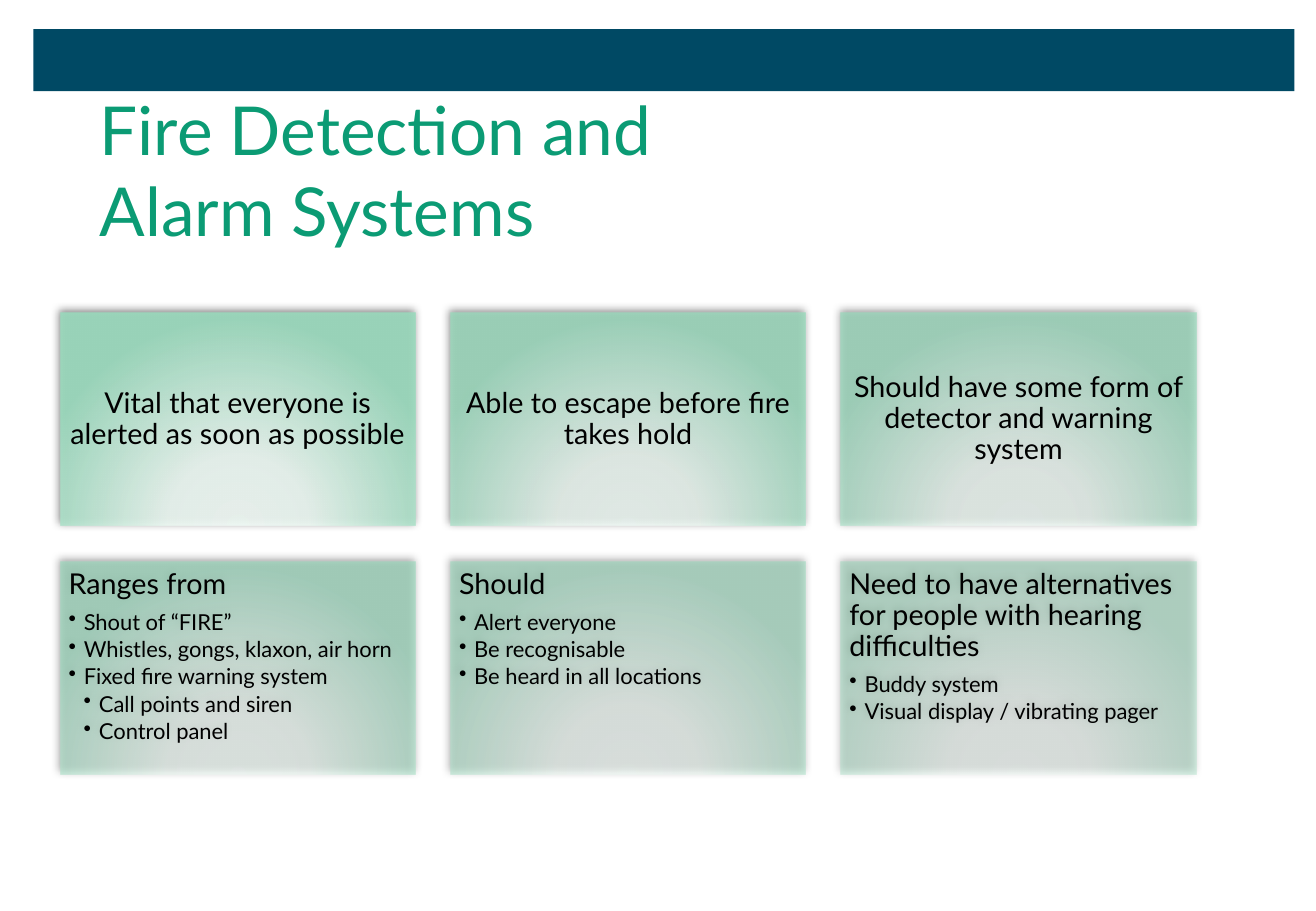
from pptx import Presentation
from pptx.dml.color import RGBColor
from pptx.enum.shapes import MSO_SHAPE
from pptx.enum.text import MSO_ANCHOR, PP_ALIGN
from pptx.oxml import parse_xml
from pptx.oxml.ns import nsdecls, qn
from pptx.util import Pt

RECT = MSO_SHAPE.RECTANGLE
TOP, MIDDLE = MSO_ANCHOR.TOP, MSO_ANCHOR.MIDDLE
LEFT, CENTER = PP_ALIGN.LEFT, PP_ALIGN.CENTER

THEME = {
    "font": "Lato",
    "bar": RGBColor.from_string("004964"),
    "title": RGBColor.from_string("0B9B74"),
    "text": RGBColor.from_string("000000"),
    "stops": [(0, "F0FBF6"), (34, "ECF8F2"), (100, "9BDBBE")],
    "shade": "000000",
    "sizes": {"title": 40, "head": 17, "item": 13},
}

FORMATS = [
    {"size": "head", "space_after": Pt(6), "indent": 0},
    {"size": "item", "space_after": Pt(2.1), "indent": 9},
    {"size": "item", "space_after": Pt(2.1), "indent": 18},
]

CARDS = [
    [(0, "Vital that everyone is alerted as soon as possible")],
    [(0, "Able to escape before fire takes hold")],
    [(0, "Should have some form of detector and warning system")],
    [
        (0, "Ranges from"),
        (1, "Shout of “FIRE”"),
        (1, "Whistles, gongs, klaxon, air horn"),
        (1, "Fixed fire warning system"),
        (2, "Call points and siren"),
        (2, "Control panel"),
    ],
    [
        (0, "Should"),
        (1, "Alert everyone"),
        (1, "Be recognisable"),
        (1, "Be heard in all locations"),
    ],
    [
        (0, "Need to have alternatives for people with hearing difficulties"),
        (1, "Buddy system"),
        (1, "Visual display / vibrating pager"),
    ],
]


def write(para, text, size, color):
    look = {"name": THEME["font"], "size": Pt(THEME["sizes"][size])}
    para.text = text
    for run in para.runs:
        for key, value in look.items():
            setattr(run.font, key, value)
        run.font.color.rgb = color


def glaze(shape, alpha):
    stops = "".join(
        f'<a:gs pos="{pos * 1000}"><a:srgbClr val="{color}">'
        f'<a:alpha val="{alpha * 1000}"/></a:srgbClr></a:gs>'
        for pos, color in THEME["stops"]
    )
    grad = parse_xml(
        f'<a:gradFill {nsdecls("a")} rotWithShape="1"><a:gsLst>{stops}</a:gsLst>'
        '<a:path path="circle"><a:fillToRect l="50000" t="155000" '
        'r="50000" b="-55000"/></a:path></a:gradFill>'
    )
    shadow = parse_xml(
        f'<a:outerShdw {nsdecls("a")} blurRad="{Pt(5)}" dist="{Pt(2)}" '
        f'dir="{245 * 60000}" rotWithShape="0"><a:srgbClr val="{THEME["shade"]}">'
        '<a:alpha val="50000"/></a:srgbClr></a:outerShdw>'
    )
    shape.fill.background()
    shape.line.fill.background()
    shape.shadow.inherit = False
    props = shape.element.spPr
    props.replace(props.find(qn("a:noFill")), grad)
    props.find(qn("a:effectLst")).append(shadow)


deck = Presentation()
deck.slide_width, deck.slide_height = Pt(780), Pt(540)
slide = deck.slides.add_slide(deck.slide_layouts[6])
shapes = slide.shapes

bar = shapes.add_shape(RECT, Pt(19.8), Pt(17.3), Pt(747.4), Pt(36.7))
bar.shadow.inherit = False
bar.fill.solid()
bar.fill.fore_color.rgb = THEME["bar"]
bar.line.fill.background()

title = shapes.add_textbox(Pt(52), Pt(48.2), Pt(541.4), Pt(103.7))
title.text_frame.word_wrap = True
title.text_frame.vertical_anchor = MIDDLE
write(title.text_frame.paragraphs[0], "Fire Detection and\vAlarm Systems", "title", THEME["title"])

for index, lines in enumerate(CARDS):
    row, col = divmod(index, 3)
    card = shapes.add_shape(
        RECT, Pt(35.7 + col * 231.4), Pt(185.6 + row * 147.4), Pt(210.4), Pt(126.2)
    )
    glaze(card, 90 - 8 * index)
    frame = card.text_frame
    setup = {"word_wrap": True, "vertical_anchor": TOP if row else MIDDLE}
    setup.update({f"margin_{side}": Pt(5) for side in ("left", "right", "top", "bottom")})
    for key, value in setup.items():
        setattr(frame, key, value)
    for place, (level, text) in enumerate(lines):
        form = FORMATS[level]
        para = frame.add_paragraph() if place else frame.paragraphs[0]
        if level:
            props = para._p.get_or_add_pPr()
            props.set("marL", str(Pt(form["indent"])))
            props.set("indent", str(Pt(-9)))
            props.append(parse_xml(f'<a:buChar {nsdecls("a")} char="•"/>'))
        style = {
            "level": level,
            "alignment": LEFT if row else CENTER,
            "line_spacing": 0.9,
            "space_after": form["space_after"],
        }
        for key, value in style.items():
            setattr(para, key, value)
        write(para, text, form["size"], THEME["text"])

deck.save("out.pptx")
